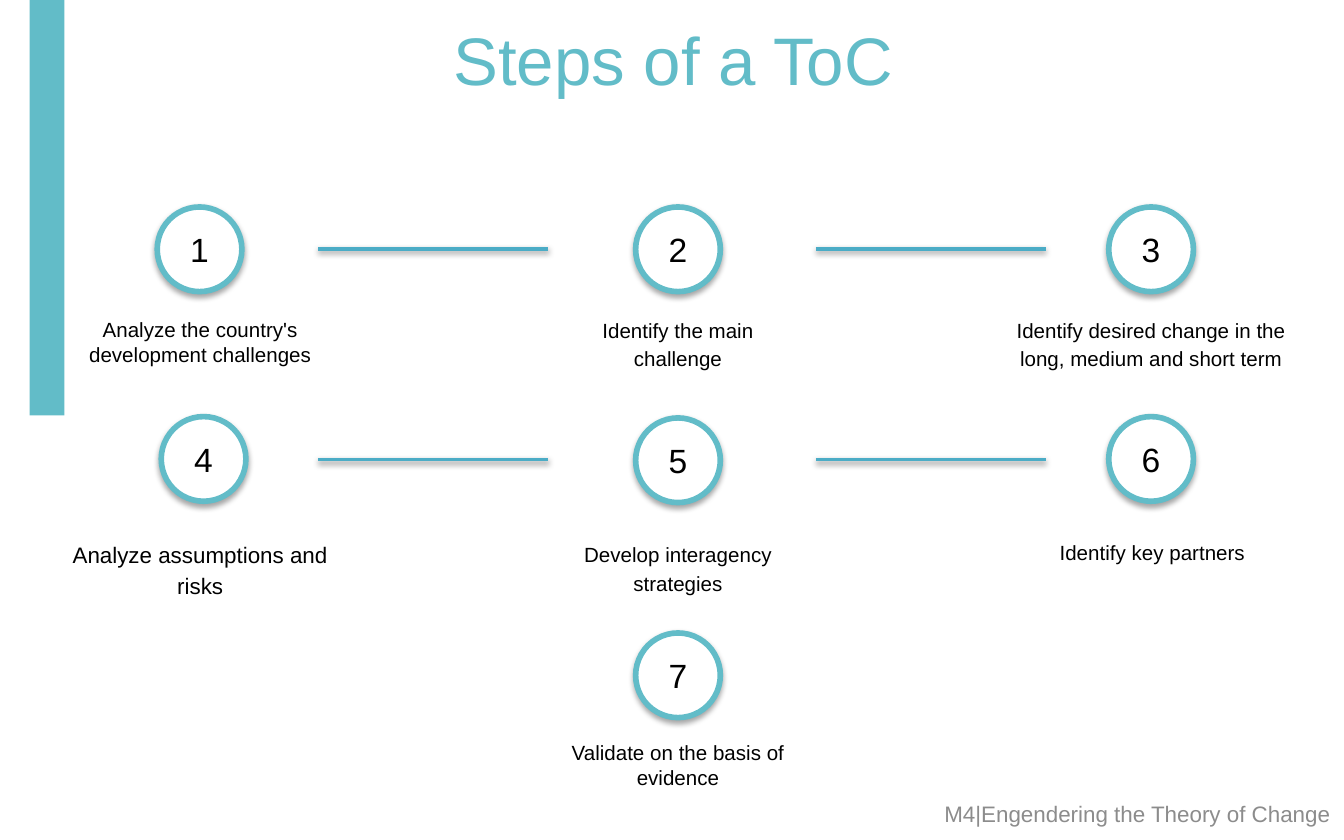
"""Build the slide that shows the seven steps of a theory of change."""
from dataclasses import dataclass

from lxml import etree
from pptx import Presentation
from pptx.dml.color import RGBColor
from pptx.enum import shapes, text
from pptx.oxml import ns
from pptx.util import Inches, Pt

TEAL = RGBColor(0x62, 0xBC, 0xC8)
BLUE = RGBColor(0x4B, 0xAC, 0xC6)
GRAY = RGBColor(0x8C, 0x8C, 0x8C)
BLACK = RGBColor(0, 0, 0)
WHITE = RGBColor(0xFF, 0xFF, 0xFF)
FONT = "Arial"
CIRCLE = 0.63
LINK_LENGTH = 1.71


@dataclass(frozen=True)
class Label:
    wording: str
    left: float
    top: float
    width: float
    height: float
    size: float = 11
    spacing: float = 1.0
    color: RGBColor = BLACK
    align: text.PP_ALIGN = text.PP_ALIGN.CENTER
    anchor: text.MSO_ANCHOR = text.MSO_ANCHOR.TOP


@dataclass(frozen=True)
class Step:
    number: int
    left: float
    top: float
    label: Label


TITLE = Label("Steps of a ToC", 0.51, 0, 9, 0.87, 36, color=TEAL,
              anchor=text.MSO_ANCHOR.MIDDLE)
FOOTER = Label("M4|Engendering the Theory of Change", 3.62, 5.85, 6.38, 0.41, 12,
               color=GRAY, align=text.PP_ALIGN.RIGHT, anchor=text.MSO_ANCHOR.MIDDLE)
STEPS = (
    Step(1, 1.17, 1.54, Label("Analyze the country's development challenges",
                              0.44, 2.31, 2.1, 0.47)),
    Step(2, 4.73, 1.54, Label("Identify the main challenge",
                              4.13, 2.29, 1.83, 0.51, spacing=1.15)),
    Step(3, 8.25, 1.54, Label("Identify desired change in the long, medium and short term",
                              7.44, 2.29, 2.25, 0.53, spacing=1.15)),
    Step(4, 1.2, 3.1, Label("Analyze assumptions and risks",
                            0.44, 3.95, 2.1, 0.55, 12, 1.15)),
    Step(5, 4.73, 3.11, Label("Develop interagency strategies",
                              4.13, 3.96, 1.83, 0.53, spacing=1.15)),
    Step(6, 8.25, 3.1, Label("Identify key partners",
                             7.46, 3.94, 2.23, 0.3, spacing=1.15)),
    Step(7, 4.73, 4.71, Label("Validate on the basis of evidence",
                              4.13, 5.46, 1.83, 0.47)),
)
LINK_LEFTS = (2.37, 6.07)
LINK_TOPS = (1.85, 3.42)


def add_shadow(item, distance: float, opacity: int) -> None:
    effects = etree.SubElement(item._element.spPr, ns.qn("a:effectLst"))
    shadow = etree.SubElement(effects, ns.qn("a:outerShdw"), blurRad=str(Pt(3.1)),
                              dist=str(Pt(distance)), dir="5400000", rotWithShape="0")
    tint = etree.SubElement(shadow, ns.qn("a:srgbClr"), val=str(BLACK))
    etree.SubElement(tint, ns.qn("a:alpha"), val=str(opacity * 1000))


def write(frame, wording: str, size: float, color: RGBColor,
          align: text.PP_ALIGN, spacing: float = 1.0) -> None:
    frame.text = wording
    paragraph = frame.paragraphs[0]
    paragraph.alignment = align
    paragraph.line_spacing = spacing
    font = paragraph.runs[0].font
    font.name, font.size = FONT, Pt(size)
    font.color.rgb = color


def add_label(slide, label: Label) -> None:
    box = slide.shapes.add_textbox(Inches(label.left), Inches(label.top),
                                   Inches(label.width), Inches(label.height))
    frame = box.text_frame
    frame.word_wrap = True
    frame.vertical_anchor = label.anchor
    write(frame, label.wording, label.size, label.color, label.align, label.spacing)


def add_sidebar(slide) -> None:
    sidebar = slide.shapes.add_shape(shapes.MSO_SHAPE.RECTANGLE, Inches(0.22), Inches(0),
                                     Inches(0.26), Inches(3.09))
    sidebar.shadow.inherit = False
    sidebar.fill.solid()
    sidebar.fill.fore_color.rgb = TEAL
    sidebar.line.fill.background()


def add_step(slide, step: Step) -> None:
    circle = slide.shapes.add_shape(shapes.MSO_SHAPE.OVAL, Inches(step.left),
                                    Inches(step.top), Inches(CIRCLE), Inches(CIRCLE))
    circle.fill.solid()
    circle.fill.fore_color.rgb = WHITE
    circle.line.color.rgb = TEAL
    circle.line.width = Pt(3)
    add_shadow(circle, 1.8, 35)
    circle.text_frame.vertical_anchor = text.MSO_ANCHOR.MIDDLE
    write(circle.text_frame, str(step.number), 18, BLACK, text.PP_ALIGN.CENTER)
    add_label(slide, step.label)


def add_link(slide, left: float, top: float) -> None:
    link = slide.shapes.add_connector(shapes.MSO_CONNECTOR.STRAIGHT, Inches(left),
                                      Inches(top), Inches(left + LINK_LENGTH), Inches(top))
    link.line.color.rgb = BLUE
    link.line.width = Pt(2)
    add_shadow(link, 1.6, 38)


def main() -> None:
    deck = Presentation()
    deck.slide_width, deck.slide_height = Inches(10), Inches(6.25)
    slide = deck.slides.add_slide(deck.slide_layouts[6])
    add_sidebar(slide)
    add_label(slide, TITLE)
    add_label(slide, FOOTER)
    for step in STEPS:
        add_step(slide, step)
    for top in LINK_TOPS:
        for left in LINK_LEFTS:
            add_link(slide, left, top)
    deck.save("out.pptx")


if __name__ == "__main__":
    main()
